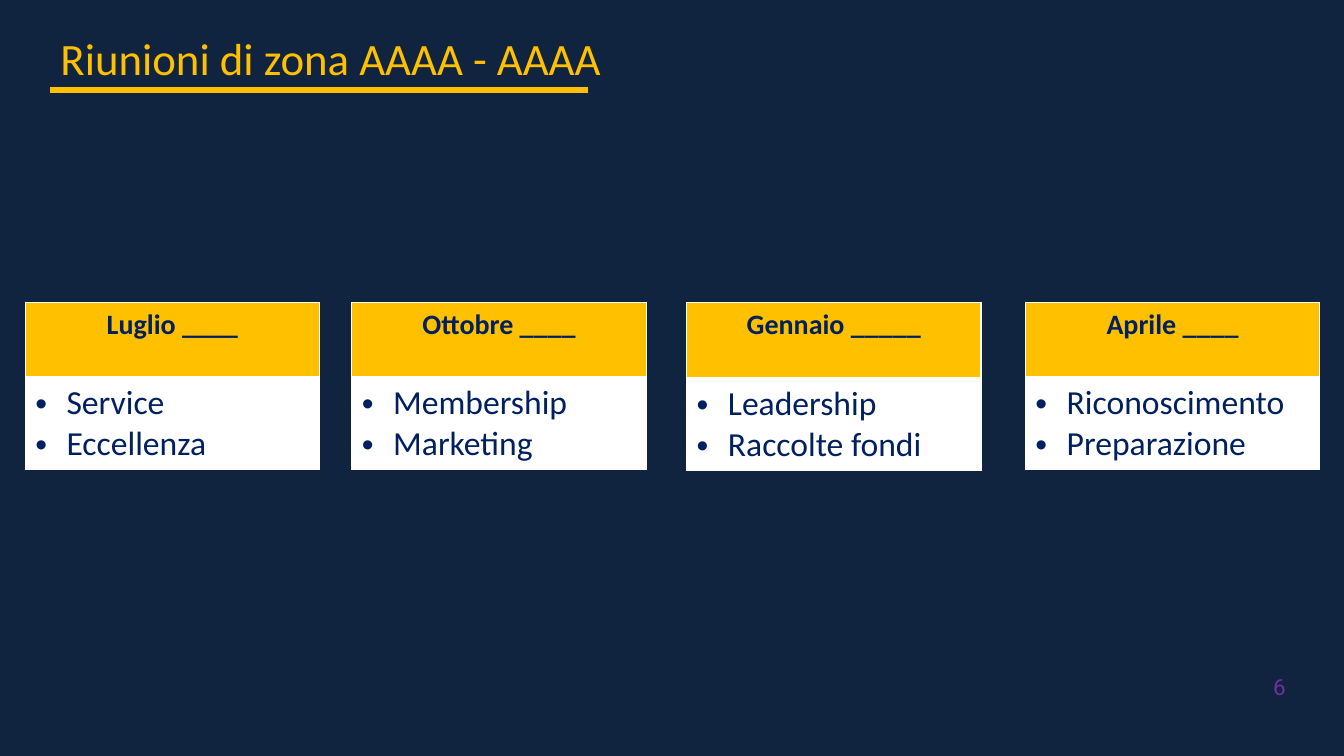
from dataclasses import dataclass

from lxml import etree
from pptx import Presentation
from pptx.dml.color import RGBColor
from pptx.enum.shapes import MSO_CONNECTOR
from pptx.enum.text import MSO_ANCHOR, MSO_AUTO_SIZE, PP_ALIGN
from pptx.oxml.ns import qn
from pptx.util import Inches, Pt

STRAIGHT = MSO_CONNECTOR.STRAIGHT
TOP, MIDDLE = MSO_ANCHOR.TOP, MSO_ANCHOR.MIDDLE
LEFT, CENTER, RIGHT = PP_ALIGN.LEFT, PP_ALIGN.CENTER, PP_ALIGN.RIGHT
NO_FIT = MSO_AUTO_SIZE.NONE

NAVY, GOLD, INK = "10233F", "FFC000", "002060"
WHITE, PURPLE = "FFFFFF", "7030A0"

TITLE = {"name": "Calibri", "size": Pt(32), "bold": False}
MONTH = {"name": "Calibri", "size": Pt(20), "bold": True}
TOPIC = {"name": "Calibri", "size": Pt(24), "bold": False}
NUMBER = {"name": "Roboto", "size": Pt(16), "bold": False}

CARD_TOP, CARD_WIDTH = 3, 2.92
BODY_HEIGHT = 0.91
BULLET_INDENT = 0.31


@dataclass
class Meeting:
    left: float
    month: str
    topics: list[str]
    header_height: float = 0.75


MEETINGS = [
    Meeting(0.25, "Luglio ____", ["Service", "Eccellenza"]),
    Meeting(3.49, "Ottobre ____", ["Membership", "Marketing"]),
    Meeting(6.81, "Gennaio _____", ["Leadership", "Raccolte fondi"], 0.76),
    Meeting(10.17, "Aprile ____", ["Riconoscimento", "Preparazione"]),
]


def rgb(color: str) -> RGBColor:
    return RGBColor.from_string(color)


def write(p, text: str, font: dict, color: str, align=LEFT) -> None:
    p.alignment = align
    r = p.add_run()
    r.text = text
    for name, value in font.items():
        setattr(r.font, name, value)
    r.font.color.rgb = rgb(color)


def add_bullet(p) -> None:
    pPr = p._p.get_or_add_pPr()
    pPr.set("marL", str(Inches(BULLET_INDENT)))
    pPr.set("indent", str(-Inches(BULLET_INDENT)))
    etree.SubElement(pPr, qn("a:buFont"), typeface="Arial")
    etree.SubElement(pPr, qn("a:buChar"), char="•")


def format_cell(cell, fill: str, bottom: float = 1) -> None:
    cell.fill.solid()
    cell.fill.fore_color.rgb = rgb(fill)
    tcPr = cell._tc.get_or_add_tcPr()
    widths = {"lnL": 1, "lnR": 1, "lnT": 1, "lnB": bottom}
    # Borders come before the fill in the cell properties
    for i, (side, width) in enumerate(widths.items()):
        ln = etree.Element(qn(f"a:{side}"), w=str(Pt(width)))
        solid = etree.SubElement(ln, qn("a:solidFill"))
        etree.SubElement(solid, qn("a:srgbClr"), val=WHITE)
        tcPr.insert(i, ln)


def add_meeting(slide, meeting: Meeting) -> None:
    heights = [meeting.header_height, BODY_HEIGHT]
    table = slide.shapes.add_table(
        2, 1, Inches(meeting.left), Inches(CARD_TOP),
        Inches(CARD_WIDTH), Inches(sum(heights))).table
    table.first_row = table.horz_banding = False
    for row, height in zip(table.rows, heights):
        row.height = Inches(height)

    header, body = table.cell(0, 0), table.cell(1, 0)
    format_cell(header, GOLD, bottom=3)
    write(header.text_frame.paragraphs[0], meeting.month, MONTH, INK, CENTER)

    format_cell(body, WHITE)
    tf = body.text_frame
    for i, topic in enumerate(meeting.topics):
        p = tf.add_paragraph() if i else tf.paragraphs[0]
        write(p, topic, TOPIC, INK)
        add_bullet(p)


def add_title(slide, text: str) -> None:
    sp = slide.shapes.title
    sp.left, sp.top = Inches(0.5), Inches(0.25)
    sp.width, sp.height = Inches(5.67), Inches(0.64)
    tf = sp.text_frame
    tf.word_wrap, tf.auto_size, tf.vertical_anchor = True, NO_FIT, TOP
    write(tf.paragraphs[0], text, TITLE, GOLD)


def add_underline(slide) -> None:
    line = slide.shapes.add_connector(
        STRAIGHT, Inches(0.5), Inches(0.89), Inches(5.83), Inches(0.89))
    line.line.color.rgb = rgb(GOLD)
    line.line.width = Pt(4.5)
    etree.SubElement(line._element.spPr, qn("a:effectLst"))


def add_page_number(slide, number: str) -> None:
    sp = slide.shapes.add_textbox(
        Inches(12.14), Inches(6.63), Inches(0.61), Inches(0.37))
    tf = sp.text_frame
    tf.word_wrap, tf.vertical_anchor = True, MIDDLE
    tf.margin_left = tf.margin_right = 0
    write(tf.paragraphs[0], number, NUMBER, PURPLE, RIGHT)


def main() -> None:
    prs = Presentation()
    prs.slide_width, prs.slide_height = Inches(13.33), Inches(7.5)
    slide = prs.slides.add_slide(prs.slide_layouts[5])
    slide.background.fill.solid()
    slide.background.fill.fore_color.rgb = rgb(NAVY)

    # Heading and page number
    add_page_number(slide, "6")
    add_title(slide, "Riunioni di zona AAAA - AAAA")
    add_underline(slide)

    # One table per meeting
    for meeting in MEETINGS:
        add_meeting(slide, meeting)

    prs.save("out.pptx")


if __name__ == "__main__":
    main()
